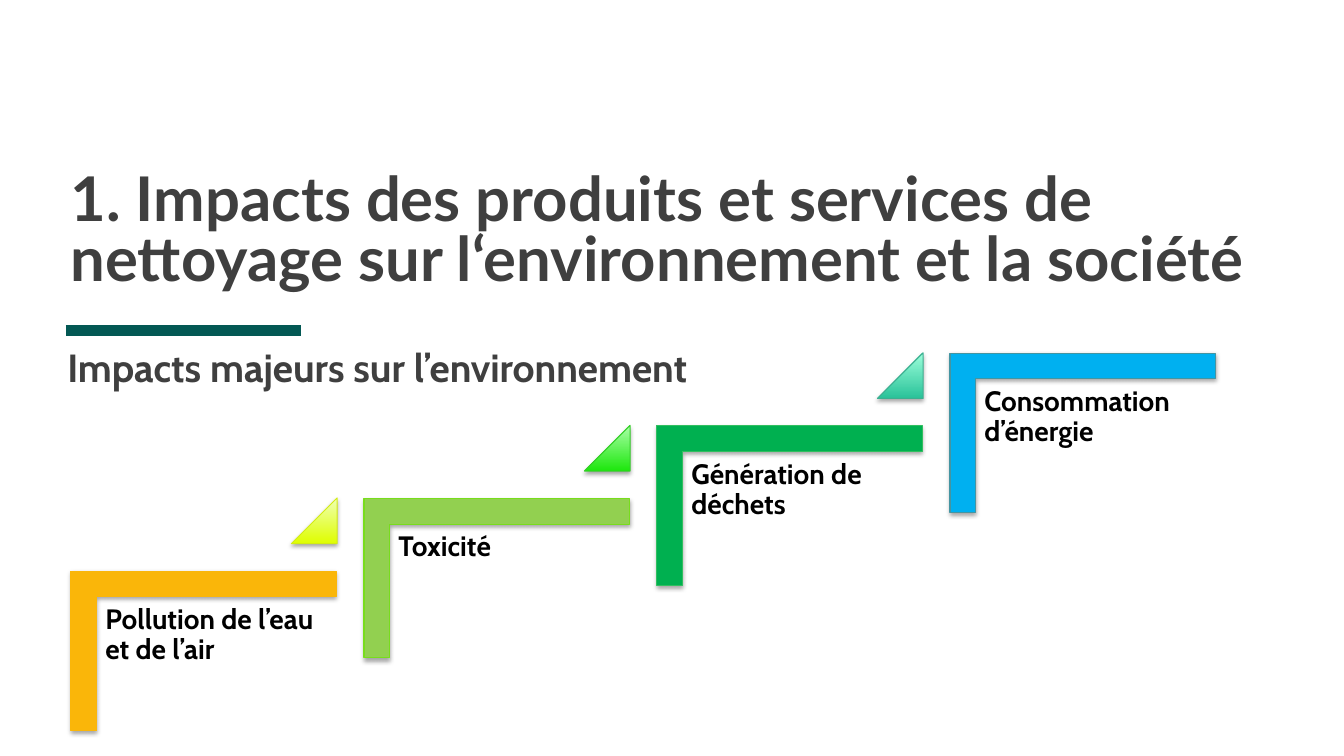
from dataclasses import dataclass
from typing import Optional

from lxml.etree import SubElement
from pptx import Presentation
from pptx.dml.color import RGBColor
from pptx.enum.shapes import MSO_CONNECTOR, MSO_SHAPE
from pptx.enum.text import MSO_ANCHOR as Anchor, MSO_AUTO_SIZE as AutoSize
from pptx.oxml.ns import qn
from pptx.util import Pt

COLORS = {
    "heading": "3F3F3F", "label": "000000", "rule": "035854", "shadow": "000000",
    "orange": "FAB609", "lime": "92D050", "lime_edge": "78DD1C",
    "green": "00B050", "green_edge": "31BF60", "blue": "00B0F0", "blue_edge": "4495A2",
    "yellow_deep": "DFFE00", "yellow_pale": "EFFFB4", "yellow_edge": "D3ED11",
    "leaf_deep": "1DE70D", "leaf_pale": "A9FFA7", "leaf_edge": "33CE27",
    "mint_deep": "29C299", "mint_pale": "9DFFDB", "mint_edge": "3BB091",
}
STEP_RIGHT, STEP_UP = 209.3, 51.84


@dataclass(frozen=True)
class Box:
    left: float
    top: float
    width: float
    height: float

    def climb(self, level: int) -> "Box":
        return Box(self.left + level * STEP_RIGHT, self.top - level * STEP_UP,
                   self.width, self.height)

    def lengths(self) -> tuple:
        return Pt(self.left), Pt(self.top), Pt(self.width), Pt(self.height)


@dataclass(frozen=True)
class Marker:
    deep: str
    pale: str
    edge: str


@dataclass(frozen=True)
class Impact:
    label: str
    fill: str
    edge: str
    marker: Optional[Marker] = None


@dataclass(frozen=True)
class TextStyle:
    font: str
    size: float
    color: str
    spacing: float = 1.0
    inset_x: float = 0
    inset_y: float = 0
    anchor: Anchor = Anchor.TOP
    wrap: bool = True
    auto_size: AutoSize = AutoSize.NONE


CORNER = Box(88.5, 370.1, 113.8, 189.4)
LABEL = Box(69.2, 426.2, 171.4, 149.8)
MARKER = Box(208.2, 355.7, 32.6, 32.6)

TITLE_STYLE = TextStyle("Lato", 44, "heading", 0.8, anchor=Anchor.BOTTOM)
SUBTITLE_STYLE = TextStyle("Cabin", 28, "heading", inset_x=7.2, inset_y=3.6,
                           anchor=Anchor.MIDDLE, wrap=False,
                           auto_size=AutoSize.SHAPE_TO_FIT_TEXT)
LABEL_STYLE = TextStyle("Cabin", 20, "label", 0.9, inset_x=6, inset_y=6)

IMPACTS = [
    Impact("Pollution de l’eau et de l’air", "orange", "orange",
           Marker("yellow_deep", "yellow_pale", "yellow_edge")),
    Impact("Toxicité", "lime", "lime_edge",
           Marker("leaf_deep", "leaf_pale", "leaf_edge")),
    Impact("Génération de déchets", "green", "green_edge",
           Marker("mint_deep", "mint_pale", "mint_edge")),
    Impact("Consommation d’énergie", "blue", "blue_edge"),
]


def rgb(name: str) -> RGBColor:
    return RGBColor.from_string(COLORS[name])


def add_text(slide, box: Box, words: str, style: TextStyle) -> None:
    frame = slide.shapes.add_textbox(*box.lengths()).text_frame
    frame.word_wrap = style.wrap
    frame.auto_size = style.auto_size
    frame.vertical_anchor = style.anchor
    frame.margin_left = frame.margin_right = Pt(style.inset_x)
    frame.margin_top = frame.margin_bottom = Pt(style.inset_y)
    paragraph = frame.paragraphs[0]
    paragraph.line_spacing = style.spacing
    run = paragraph.add_run()
    run.text = words
    run.font.name = style.font
    run.font.size = Pt(style.size)
    run.font.bold = True
    run.font.color.rgb = rgb(style.color)


def finish_outline(shape, edge: str) -> None:
    shape.line.color.rgb = rgb(edge)
    shape.line.width = Pt(0.75)
    shape.shadow.inherit = False
    effects = shape._element.spPr.find(qn("a:effectLst"))
    shadow = SubElement(effects, qn("a:outerShdw"), blurRad=str(Pt(3.1)),
                        dist=str(Pt(1.8)), dir="5400000", rotWithShape="0")
    tint = SubElement(shadow, qn("a:srgbClr"), val=COLORS["shadow"])
    SubElement(tint, qn("a:alpha"), val="35000")


def add_corner(slide, box: Box, impact: Impact) -> None:
    corner = slide.shapes.add_shape(MSO_SHAPE.RECTANGLE, *box.lengths())
    corner.rotation = 90
    geometry = corner._element.spPr.find(qn("a:prstGeom"))
    geometry.set("prst", "corner")
    guides = geometry.find(qn("a:avLst"))
    for guide in ("adj1", "adj2"):
        SubElement(guides, qn("a:gd"), name=guide, fmla="val 16100")
    corner.fill.solid()
    corner.fill.fore_color.rgb = rgb(impact.fill)
    finish_outline(corner, impact.edge)


def add_marker(slide, box: Box, marker: Marker) -> None:
    triangle = slide.shapes.add_shape(MSO_SHAPE.ISOSCELES_TRIANGLE, *box.lengths())
    triangle.adjustments[0] = 1
    triangle.fill.gradient()
    triangle.fill.gradient_angle = 90
    for stop, color in zip(triangle.fill.gradient_stops, (marker.deep, marker.pale)):
        stop.color.rgb = rgb(color)
    finish_outline(triangle, marker.edge)


def add_rule(slide, left: float, right: float, y: float) -> None:
    rule = slide.shapes.add_connector(MSO_CONNECTOR.STRAIGHT,
                                      Pt(left), Pt(y), Pt(right), Pt(y))
    rule.line.color.rgb = rgb("rule")
    rule.line.width = Pt(8)
    SubElement(rule._element.spPr, qn("a:effectLst"))


def main() -> None:
    deck = Presentation()
    deck.slide_width, deck.slide_height = Pt(960), Pt(540)
    slide = deck.slides.add_slide(deck.slide_layouts[6])

    add_rule(slide, 47, 214.8, 236)
    add_text(slide, Box(50.4, 126, 898.6, 83.2),
             "1. Impacts des produits et services de nettoyage "
             "sur l‘environnement et la société", TITLE_STYLE)
    add_text(slide, Box(41, 241.2, 516.2, 41),
             "Impacts majeurs sur l’environnement", SUBTITLE_STYLE)

    for level, impact in enumerate(IMPACTS):
        add_corner(slide, CORNER.climb(level), impact)
        add_text(slide, LABEL.climb(level), impact.label, LABEL_STYLE)
        if impact.marker:
            add_marker(slide, MARKER.climb(level), impact.marker)

    deck.save("out.pptx")


if __name__ == "__main__":
    main()
